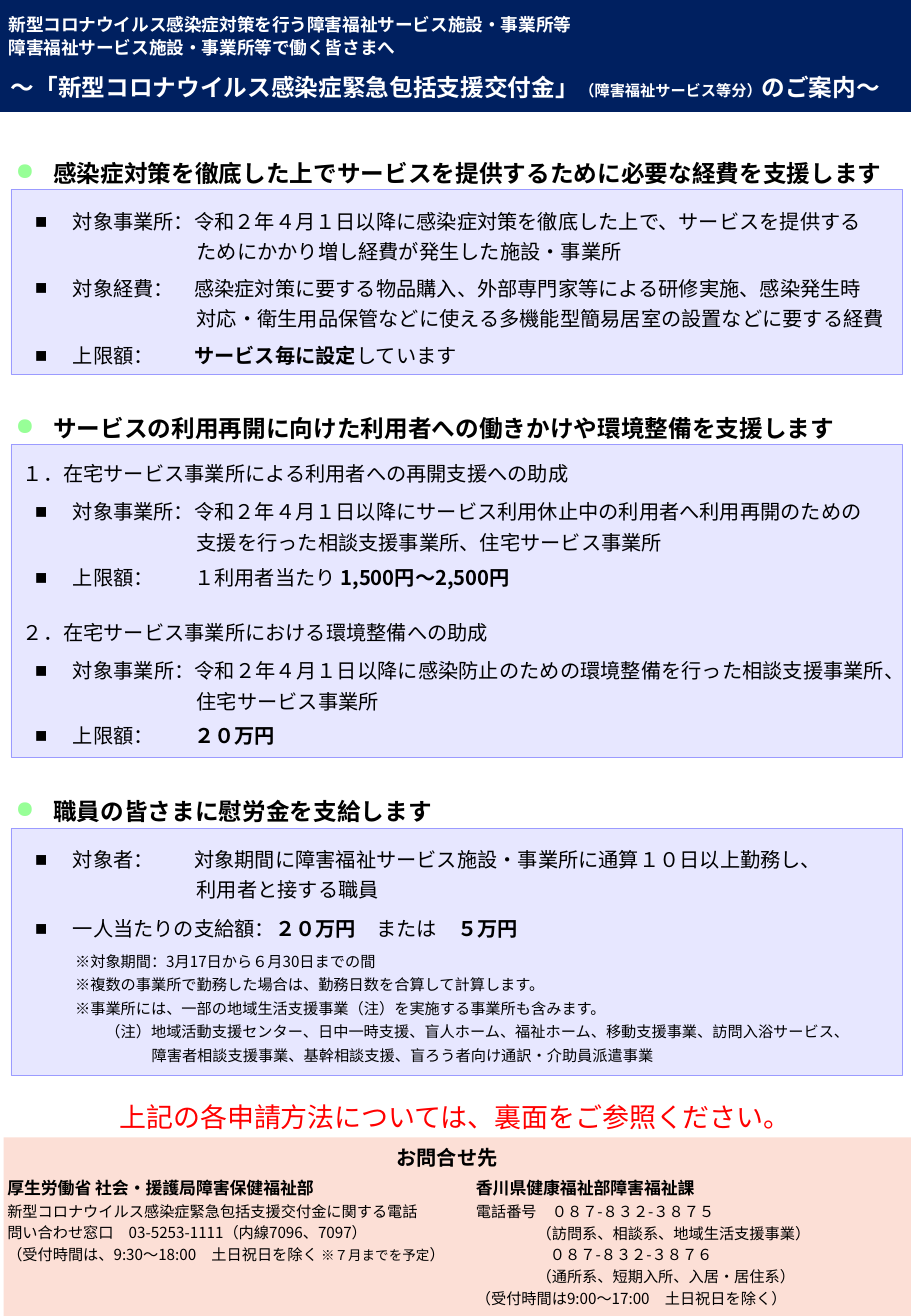
from dataclasses import dataclass
from typing import Optional

from lxml import etree
from pptx import Presentation
from pptx.dml.color import RGBColor
from pptx.enum.shapes import MSO_SHAPE
from pptx.enum.text import MSO_ANCHOR, MSO_AUTO_SIZE, PP_ALIGN
from pptx.oxml.ns import qn
from pptx.util import Inches, Pt

RECTANGLE = MSO_SHAPE.RECTANGLE
TOP, MIDDLE = MSO_ANCHOR.TOP, MSO_ANCHOR.MIDDLE
LEFT, CENTER, JUSTIFY = PP_ALIGN.LEFT, PP_ALIGN.CENTER, PP_ALIGN.JUSTIFY
FIXED_SIZE = MSO_AUTO_SIZE.NONE
COMPARISON_LAYOUT = 4


@dataclass(frozen=True)
class Theme:
    font: str = "Noto Sans CJK JP"
    ink: str = "000000"
    light: str = "FFFFFF"
    alert: str = "FF0000"
    navy: str = "002060"
    panel: str = "E7E7FF"
    panel_line: str = "9B9BFF"
    contact: str = "FCDFD6"
    bullet: str = "97FF97"
    notice: float = 16
    heading: float = 14
    body: float = 12
    intro: float = 10.5
    office: float = 10
    note: float = 9
    remark: float = 8


THEME = Theme()


@dataclass(frozen=True)
class Run:
    text: str
    bold: Optional[bool] = None
    size: Optional[float] = None
    spacing: float = 0


@dataclass(frozen=True)
class Line:
    runs: tuple[Run, ...]
    size: float = THEME.body
    bold: bool = False
    color: str = THEME.ink
    leading: Optional[float] = None
    before: float = 0
    margin: float = 0
    bullet: str = ""
    bullet_color: str = THEME.ink
    align: PP_ALIGN = LEFT


@dataclass(frozen=True)
class Block:
    box: tuple[float, float, float, float]
    lines: tuple[Line, ...]
    placeholder: Optional[int] = None
    anchor: MSO_ANCHOR = TOP
    insets: tuple[float, float] = (0.1, 0.05)


@dataclass(frozen=True)
class Panel:
    box: tuple[float, float, float, float]
    fill: str
    line: Optional[str] = None


def line(*parts: str | Run, **formats) -> Line:
    return Line(tuple(Run(part) if isinstance(part, str) else part for part in parts), **formats)


def item(*parts: str | Run, leading: float = 18, before: float = 0) -> Line:
    return line(*parts, leading=leading, before=before, margin=0.31, bullet="■", align=JUSTIFY)


def continued(text: str) -> Line:
    return line(text, leading=18, margin=1.33, align=JUSTIFY)


def heading(top: float, text: str) -> Block:
    title = line(text, size=THEME.heading, bold=True, leading=22, margin=0.31,
                 bullet="●", bullet_color=THEME.bullet)
    return Block((0.03, top, 7.41, 0.46), (title,), anchor=MIDDLE)


def subheading(top: float, text: str) -> Block:
    return Block((0.09, top, 7.16, 0.37), (line(text),), anchor=MIDDLE)


def office(text: str) -> Line:
    return line(text, size=THEME.office, bold=True, leading=15.2)


def detail(*parts: str | Run, margin: float = 0, leading: float = 13) -> Line:
    return line(*parts, size=THEME.note, margin=margin, leading=leading)


def strong(text: str) -> Run:
    return Run(text, bold=True)


LABEL_GAP = Run("　", spacing=12)

PANELS = (
    Panel((0, 0, 7.5, 0.92), THEME.navy),
    Panel((0.09, 1.56, 7.34, 1.52), THEME.panel, THEME.panel_line),
    Panel((0.09, 3.66, 7.34, 2.57), THEME.panel, THEME.panel_line),
    Panel((0.09, 6.82, 7.34, 2.03), THEME.panel, THEME.panel_line),
    Panel((0.03, 9.36, 7.47, 1.47), THEME.contact),
)

BLOCKS = (
    Block((0, 0.05, 5.5, 0.47), tuple(
        line(text, size=THEME.intro, bold=True, color=THEME.light, leading=14) for text in (
            "新型コロナウイルス感染症対策を行う障害福祉サービス施設・事業所等",
            "障害福祉サービス施設・事業所等で働く皆さまへ")), anchor=MIDDLE, insets=(0.07, 0.04)),
    Block((0.01, 0.56, 7.44, 0.32), (
        line("～「新型コロナウイルス感染症緊急包括支援交付金」",
             Run("（障害福祉サービス等分）", size=THEME.note), "のご案内～",
             size=THEME.heading, bold=True, color=THEME.light, align=JUSTIFY),
    ), placeholder=0, anchor=MIDDLE, insets=(0.08, 0.04)),
    heading(1.16, "感染症対策を徹底した上でサービスを提供するために必要な経費を支援します"),
    Block((0.19, 1.62, 7.2, 1.46), (
        item("対象事業所：令和２年４月１日以降に感染症対策を徹底した上で、サービスを提供する"),
        continued("ためにかかり増し経費が発生した施設・事業所"),
        item("対象経費：　感染症対策に要する物品購入、外部専門家等による研修実施、感染発生時", before=3.6),
        continued("対応・衛生用品保管などに使える多機能型簡易居室の設置などに要する経費"),
        item("上限額：", LABEL_GAP, strong("サービス毎に設定"), "しています", leading=22),
    ), placeholder=1),
    heading(3.26, "サービスの利用再開に向けた利用者への働きかけや環境整備を支援します"),
    subheading(3.71, "１．在宅サービス事業所による利用者への再開支援への助成"),
    Block((0.19, 4.01, 7.2, 0.89), (
        item("対象事業所：令和２年４月１日以降にサービス利用休止中の利用者へ利用再開のための"),
        continued("支援を行った相談支援事業所、住宅サービス事業所"),
        item("上限額：", LABEL_GAP, "１利用者当たり ", strong("1,500円～2,500円"), before=2.9),
    ), placeholder=2),
    subheading(5.02, "２．在宅サービス事業所における環境整備への助成"),
    Block((0.19, 5.32, 7.2, 0.88), (
        item("対象事業所：令和２年４月１日以降に感染防止のための環境整備を行った相談支援事業所、"),
        continued("住宅サービス事業所"),
        item("上限額：", LABEL_GAP, strong("２０万円"), before=2.2),
    ), placeholder=3),
    heading(6.41, "職員の皆さまに慰労金を支給します"),
    Block((0.19, 6.87, 7.2, 0.92), (
        item("対象者：", LABEL_GAP, "対象期間に障害福祉サービス施設・事業所に通算１０日以上勤務し、"),
        continued("利用者と接する職員"),
        item("一人当たりの支給額：", strong("２０万円"), "　または　", strong("５万円"), before=5),
    ), placeholder=4),
    Block((0.52, 7.74, 6.91, 1.08), tuple(
        detail(text, margin=margin, leading=14) for text, margin in (
            ("※対象期間：3月17日から６月30日までの間", 0),
            ("※複数の事業所で勤務した場合は、勤務日数を合算して計算します。", 0),
            ("※事業所には、一部の地域生活支援事業（注）を実施する事業所も含みます。", 0),
            ("（注）地域活動支援センター、日中一時支援、盲人ホーム、福祉ホーム、移動支援事業、訪問入浴サービス、", 0.25),
            ("障害者相談支援事業、基幹相談支援、盲ろう者向け通訳・介助員派遣事業", 0.63)))),
    Block((0, 9.01, 7.5, 0.37), (
        line("上記の各申請方法については、裏面をご参照ください。",
             size=THEME.notice, color=THEME.alert, align=CENTER),)),
    Block((3.02, 9.38, 1.32, 0.3), (line("お問合せ先", bold=True, align=CENTER),)),
    Block((0, 9.6, 3.89, 0.86), (
        office("厚生労働省 社会・援護局障害保健福祉部"),
        detail("新型コロナウイルス感染症緊急包括支援交付金に関する電話"),
        detail("問い合わせ窓口　03-5253-1111（内線7096、7097）"),
        detail("（受付時間は、9:30～18:00　土日祝日を除く ",
               Run("※７月までを予定", size=THEME.remark), "）"),
    ), insets=(0.06, 0.05)),
    Block((3.82, 9.6, 3.5, 1.22), (
        office("香川県健康福祉部障害福祉課"),
        detail("電話番号　０８７-８３２-３８７５"),
        detail("（訪問系、相談系、地域生活支援事業）", margin=0.5),
        detail("０８７-８３２-３８７６", margin=0.61),
        detail("（通所系、短期入所、入居・居住系）", margin=0.5),
        detail("（受付時間は9:00～17:00　土日祝日を除く）"))),
)


def apply(target, formats: dict) -> None:
    for name, value in formats.items():
        setattr(target, name, value)


def draw_panel(slide, panel: Panel) -> None:
    shape = slide.shapes.add_shape(RECTANGLE, *map(Inches, panel.box))
    shape.shadow.inherit = False
    shape.fill.solid()
    shape.fill.fore_color.rgb = RGBColor.from_string(panel.fill)
    if panel.line:
        shape.line.color.rgb = RGBColor.from_string(panel.line)
        shape.line.width = Pt(0.25)
    else:
        shape.line.fill.background()


def write_line(paragraph, content: Line) -> None:
    apply(paragraph, {"alignment": content.align, "space_before": Pt(content.before), "space_after": Pt(0),
                      "line_spacing": Pt(content.leading) if content.leading else 1.0})
    properties = paragraph._p.get_or_add_pPr()
    properties.set("marL", str(Inches(content.margin)))
    properties.set("indent", str(-Inches(content.margin) if content.bullet else 0))
    if content.bullet:
        color = etree.SubElement(properties, qn("a:buClr"))
        etree.SubElement(color, qn("a:srgbClr"), val=content.bullet_color)
        etree.SubElement(properties, qn("a:buChar"), char=content.bullet)
    else:
        etree.SubElement(properties, qn("a:buNone"))
    for part in content.runs:
        run = paragraph.add_run()
        run.text = part.text
        apply(run.font, {"name": THEME.font, "size": Pt(part.size or content.size),
                         "bold": content.bold if part.bold is None else part.bold})
        run.font.color.rgb = RGBColor.from_string(content.color)
        run_properties = run._r.get_or_add_rPr()
        etree.SubElement(run_properties, qn("a:ea"), typeface=THEME.font)
        if part.spacing:
            run_properties.set("spc", str(round(part.spacing * 100)))


def draw_block(slide, block: Block) -> None:
    left, top, width, height = map(Inches, block.box)
    if block.placeholder is None:
        shape = slide.shapes.add_textbox(left, top, width, height)
    else:
        shape = next(holder for holder in slide.placeholders
                     if holder.placeholder_format.idx == block.placeholder)
        apply(shape, {"left": left, "top": top, "width": width, "height": height})
        shape.element.getparent().append(shape.element)
    side, edge = map(Inches, block.insets)
    frame = shape.text_frame
    apply(frame, {"word_wrap": True, "auto_size": FIXED_SIZE, "vertical_anchor": block.anchor,
                  "margin_left": side, "margin_right": side, "margin_top": edge, "margin_bottom": edge})
    for index, content in enumerate(block.lines):
        write_line(frame.add_paragraph() if index else frame.paragraphs[0], content)


def main() -> None:
    presentation = Presentation()
    apply(presentation, {"slide_width": Inches(7.5), "slide_height": Inches(10.83)})
    slide = presentation.slides.add_slide(presentation.slide_layouts[COMPARISON_LAYOUT])
    for panel in PANELS:
        draw_panel(slide, panel)
    for block in BLOCKS:
        draw_block(slide, block)
    presentation.save("out.pptx")


if __name__ == "__main__":
    main()
